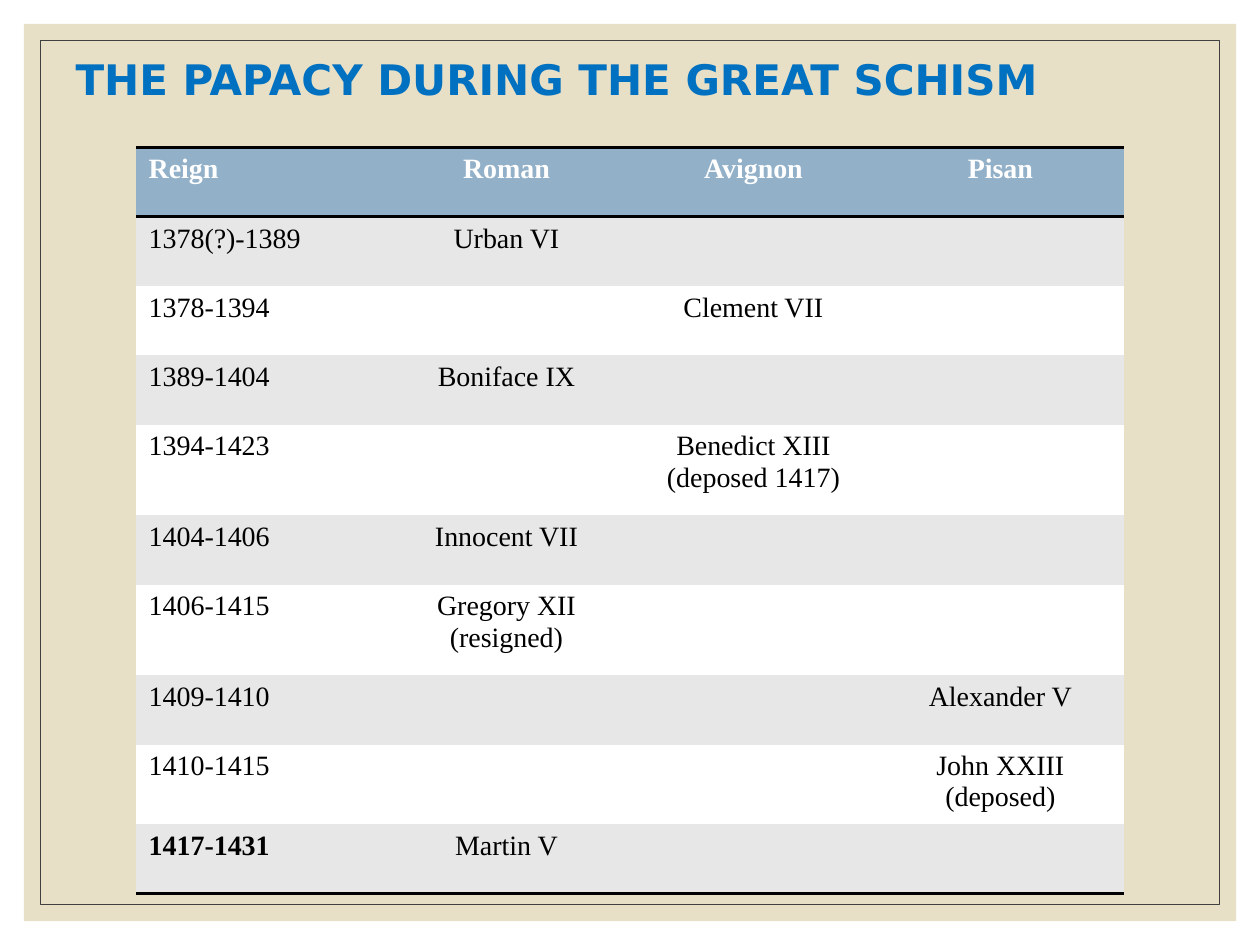
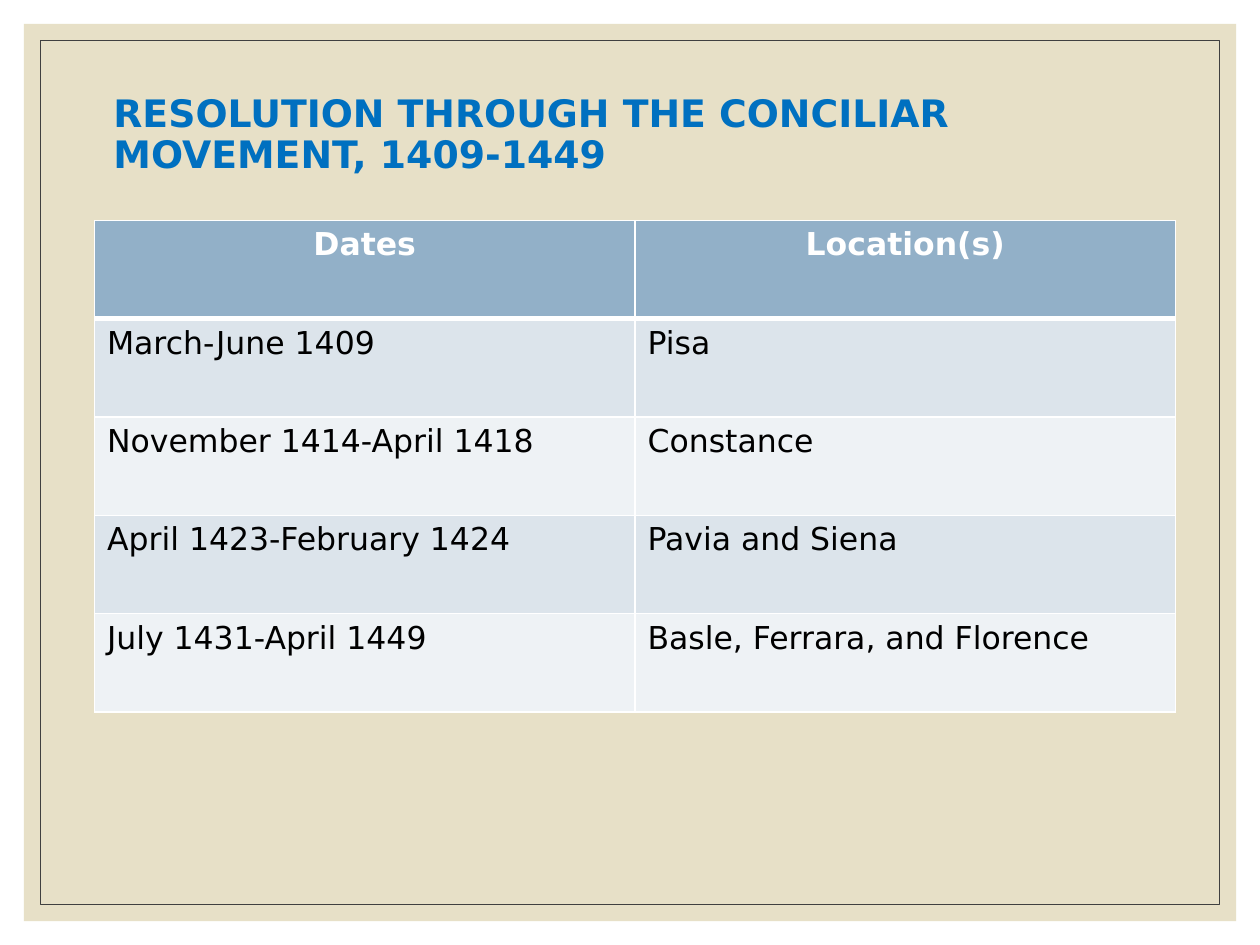
import pptx
import pptx.util
import pptx.dml.color
import pptx.enum.shapes
import pptx.enum.text
import pptx.oxml
import pptx.oxml.ns

Inches = pptx.util.Inches
Pt = pptx.util.Pt
ALIGN = pptx.enum.text.PP_ALIGN

COLORS = {
    "sand": "E7E0C7",
    "frame": "404040",
    "title": "0070C0",
    "header": "92B0C8",
    "white": "FFFFFF",
    "black": "000000",
    "grey": "E7E7E7",
    "blue band": "DCE4EB",
    "pale band": "EEF2F5",
}
SANS, SERIF = "DejaVu Sans", "Times New Roman"
PLAIN_TABLE_STYLE = "{2D5ABB26-0587-4C30-8999-92F81FD0307C}"

POPES = [
    ["Reign", "Roman", "Avignon", "Pisan"],
    ["1378(?)-1389", "Urban VI", "", ""],
    ["1378-1394", "", "Clement VII", ""],
    ["1389-1404", "Boniface IX", "", ""],
    ["1394-1423", "", "Benedict XIII\n(deposed 1417)", ""],
    ["1404-1406", "Innocent VII", "", ""],
    ["1406-1415", "Gregory XII\n(resigned)", "", ""],
    ["1409-1410", "", "", "Alexander V"],
    ["1410-1415", "", "", "John XXIII\n(deposed)"],
    ["1417-1431", "Martin V", "", ""],
]
POPE_ROW_HEIGHTS = [0.55] * 4 + [0.72, 0.55, 0.72, 0.55, 0.63, 0.55]

COUNCILS = [
    ["Dates", "Location(s)"],
    ["March-June 1409", "Pisa"],
    ["November 1414-April 1418", "Constance"],
    ["April 1423-February 1424", "Pavia and Siena"],
    ["July 1431-April 1449", "Basle, Ferrara, and Florence"],
]


def rgb(name):
    return pptx.dml.color.RGBColor.from_string(COLORS[name])


def format_font(p, face, size, color, bold):
    for r in p.runs:
        r.font.name = face
        r.font.size = Pt(size)
        r.font.color.rgb = rgb(color)
        r.font.bold = bold


def add_panel(s, margin):
    """Add a rectangle inset by margin on the left and top, centred on the slide."""
    left, top = margin, margin
    sp = s.shapes.add_shape(
        pptx.enum.shapes.MSO_SHAPE.RECTANGLE,
        Inches(left), Inches(top), Inches(10 - 2 * left), Inches(7.5 - 2 * top))
    sp.shadow.inherit = False
    return sp


def add_background(s):
    sand = add_panel(s, 0.19)
    sand.fill.solid()
    sand.fill.fore_color.rgb = rgb("sand")
    sand.line.fill.background()
    frame = add_panel(s, 0.32)
    frame.fill.background()
    frame.line.color.rgb = rgb("frame")
    frame.line.width = Pt(0.5)


def format_title(s, text, left, top, width, height, size):
    title = s.shapes.title
    title.element.getparent().append(title.element)  # in front of the panels
    title.left, title.top = Inches(left), Inches(top)
    title.width, title.height = Inches(width), Inches(height)
    tf = title.text_frame
    tf.text = text
    tf.word_wrap = True
    tf.auto_size = pptx.enum.text.MSO_AUTO_SIZE.NONE
    tf.vertical_anchor = pptx.enum.text.MSO_ANCHOR.MIDDLE
    p = tf.paragraphs[0]
    p.alignment = ALIGN.LEFT
    p.line_spacing = 0.9
    format_font(p, SANS, size, "title", True)


def add_titled_slide(prs, *title):
    s = prs.slides.add_slide(prs.slide_layouts[5])
    add_background(s)
    format_title(s, *title)
    return s


def set_borders(cell, color, **widths):
    """Draw the sides given as L, R, T or B, in points; call before filling."""
    tcPr = cell._tc.get_or_add_tcPr()
    for side in "LRTB":
        if side in widths:
            tcPr.append(pptx.oxml.parse_xml(
                f'<a:ln{side} {pptx.oxml.ns.nsdecls("a")} w="{Pt(widths[side])}">'
                f'<a:solidFill><a:srgbClr val="{COLORS[color]}"/></a:solidFill>'
                f'</a:ln{side}>'))


def add_grid(s, rows, left, top, col_width, row_heights, face, size, bands,
             border_color, borders, align):
    """Add a table; borders(row) gives side widths, align(row, col) the alignment."""
    n_cols = len(rows[0])
    table = s.shapes.add_table(
        len(rows), n_cols, Inches(left), Inches(top),
        Inches(col_width * n_cols), Inches(sum(row_heights))).table
    table._tbl.tblPr.find(pptx.oxml.ns.qn("a:tableStyleId")).text = PLAIN_TABLE_STYLE
    for col in table.columns:
        col.width = Inches(col_width)
    for i, texts in enumerate(rows):
        table.rows[i].height = Inches(row_heights[i])
        for j, text in enumerate(texts):
            cell = table.cell(i, j)
            set_borders(cell, border_color, **borders(i))
            cell.fill.solid()
            cell.fill.fore_color.rgb = rgb(bands[(i - 1) % 2] if i else "header")
            cell.text_frame.text = text
            for p in cell.text_frame.paragraphs:
                p.alignment = align(i, j)
                format_font(p, face, size, "black" if i else "white", i == 0)
    return table


def pope_borders(row):
    if row == 0:
        return {"T": 2, "B": 2}
    return {"B": 2} if row == len(POPES) - 1 else {}


def council_borders(row):
    if row == 0:
        return {"L": 1, "R": 1, "T": 1, "B": 3}
    return {"L": 1, "R": 1, "B": 1}


def add_papacy_slide(prs):
    s = add_titled_slide(prs, "THE PAPACY DURING THE GREAT SCHISM",
                         0.5, 0.3, 9, 0.7, 24)
    table = add_grid(
        s, POPES, 1.08, 1.17, 1.96, POPE_ROW_HEIGHTS, SERIF, 16,
        ("grey", "white"), "black", pope_borders,
        lambda row, col: ALIGN.CENTER if col else ALIGN.LEFT)
    last_reign = table.cell(len(POPES) - 1, 0)
    last_reign.text_frame.paragraphs[0].runs[0].font.bold = True


def add_councils_slide(prs):
    s = add_titled_slide(prs, "RESOLUTION THROUGH THE CONCILIAR MOVEMENT, 1409-1449",
                         0.8, 0.7, 8.29, 0.76, 21.6)
    add_grid(
        s, COUNCILS, 0.75, 1.75, 4.29, [0.78] * len(COUNCILS), SANS, 18,
        ("blue band", "pale band"), "white", council_borders,
        lambda row, col: ALIGN.LEFT if row else ALIGN.CENTER)


def main():
    prs = pptx.Presentation()
    prs.slide_width, prs.slide_height = Inches(10), Inches(7.5)
    add_papacy_slide(prs)
    add_councils_slide(prs)
    prs.save("out.pptx")


if __name__ == "__main__":
    main()
